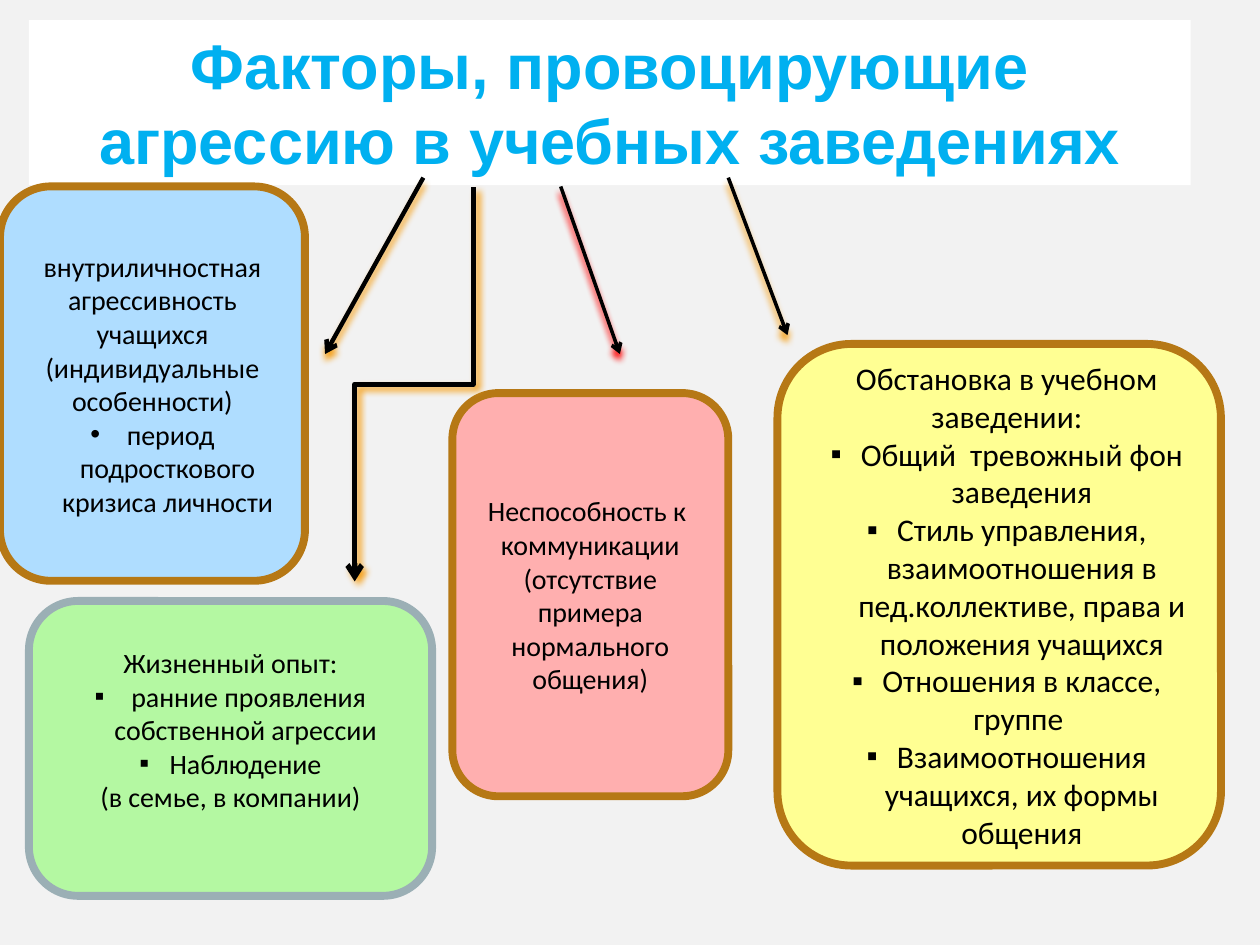
from dataclasses import dataclass

from lxml import etree
from pptx import Presentation
from pptx.dml.color import RGBColor
from pptx.enum.shapes import MSO_CONNECTOR, MSO_SHAPE
from pptx.enum.text import MSO_ANCHOR, PP_ALIGN
from pptx.oxml.ns import qn
from pptx.util import Inches, Pt

RECT, ROUND = MSO_SHAPE.RECTANGLE, MSO_SHAPE.ROUNDED_RECTANGLE
LINE, ELBOW = MSO_CONNECTOR.STRAIGHT, MSO_CONNECTOR.ELBOW
CENTER, TOP, MIDDLE = PP_ALIGN.CENTER, MSO_ANCHOR.TOP, MSO_ANCHOR.MIDDLE
COLS, ROWS = 100, 75


@dataclass(frozen=True)
class Theme:
    """Colours, fonts and type sizes."""
    back: str = "F2F2F2"
    white: str = "FFFFFF"
    ink: str = "000000"
    title: str = "00B0F0"
    blue: str = "AFDDFF"
    green: str = "B4F8A2"
    pink: str = "FFAFAF"
    yellow: str = "FFFF93"
    brown: str = "B67815"
    gray: str = "9BAFB5"
    glow: str = "F6A21D"
    red: str = "FF0000"
    head: str = "Arial"
    body: str = "Calibri"
    big: int = 36
    mid: int = 18
    small: int = 16
    edge: float = 4.5


T = Theme()


def rgb(code):
    """Turn a hex code into a colour."""
    return RGBColor.from_string(code)


def cell(*nums):
    """Turn grid steps of a tenth of an inch into lengths."""
    return [Inches(num * 10 / COLS) for num in nums]


def add_box(slide, kind, spot, fill, edge=None):
    """Add a filled shape with an optional border."""
    box = slide.shapes.add_shape(kind, *cell(*spot))
    box.shadow.inherit = False
    box.fill.solid()
    box.fill.fore_color.rgb = rgb(fill)
    if edge:
        box.line.color.rgb = rgb(edge)
        box.line.width = Pt(T.edge)
    else:
        box.line.fill.background()
    return box


def add_mark(para, mark):
    """Give a paragraph a hanging bullet."""
    props = para._p.get_or_add_pPr()
    hang = Inches(0.24)
    props.set("marL", str(hang))
    props.set("indent", str(-hang))
    etree.SubElement(props, qn("a:buFont"), typeface="Arial")
    etree.SubElement(props, qn("a:buChar"), char=mark)


def write(box, lines, size, font=T.body, color=T.ink, bold=False, anchor=MIDDLE):
    """Write centred lines, each a string or a (bullet, string) pair."""
    frame = box.text_frame
    frame.word_wrap = True
    frame.vertical_anchor = anchor
    for i, line in enumerate(lines):
        mark, text = line if isinstance(line, tuple) else (None, line)
        para = frame.add_paragraph() if i else frame.paragraphs[0]
        para.text = text
        para.alignment = CENTER
        para.font.name, para.font.size = font, Pt(size)
        para.font.bold = bold
        para.font.color.rgb = rgb(color)
        if mark:
            add_mark(para, mark)


def add_card(slide, spot, fill, lines, edge=T.brown, size=T.small, pad=None):
    """Add a rounded card; pad holds left, top, right and bottom insets."""
    card = add_box(slide, ROUND, spot, fill, edge)
    write(card, lines, size)
    if pad:
        frame = card.text_frame
        (frame.margin_left, frame.margin_top,
         frame.margin_right, frame.margin_bottom) = cell(*pad)


def add_arrow(slide, ends, width, glow=T.glow, kind=LINE, turn=0, cast=(4, 90)):
    """Add an arrow with a coloured shadow; cast is distance and angle."""
    arrow = slide.shapes.add_connector(kind, *cell(*ends))
    arrow.line.color.rgb = rgb(T.ink)
    arrow.line.width = Pt(width)
    etree.SubElement(arrow.line._get_or_add_ln(), qn("a:tailEnd"), type="arrow")
    props = arrow._element.spPr
    if turn:
        props.find(qn("a:xfrm")).set("rot", str(turn * 60000))
    far, angle = cast
    fx = etree.SubElement(props, qn("a:effectLst"))
    shade = etree.SubElement(
        fx, qn("a:outerShdw"), blurRad=str(Pt(4)), dist=str(Pt(far)),
        dir=str(angle * 60000), rotWithShape="0")
    etree.SubElement(shade, qn("a:srgbClr"), val=glow)


def main():
    """Build the slide and save it."""
    deck = Presentation()
    deck.slide_width, deck.slide_height = cell(COLS, ROWS)
    slide = deck.slides.add_slide(deck.slide_layouts[6])
    slide.background.fill.solid()
    slide.background.fill.fore_color.rgb = rgb(T.back)

    title = add_box(slide, RECT, (2.3, 1.6, 92.2, 13.1), T.white)
    write(title, ["Факторы, провоцирующие агрессию в учебных заведениях"],
          T.big, T.head, T.title, True, TOP)

    add_arrow(slide, (33.6, 14.1, 25.8, 28.1), 2.5)
    add_arrow(slide, (44.5, 14.8, 49.2, 28.1), 2, T.red)
    add_arrow(slide, (57.8, 14.1, 62.5, 26.6), 2)

    add_card(slide, (0, 14.8, 24.2, 31.3), T.blue, [
        "внутриличностная агрессивность учащихся",
        "(индивидуальные особенности)",
        ("•", " период подросткового кризиса личности")])
    add_card(slide, (2.3, 47.7, 32, 23.4), T.green, [
        "Жизненный опыт:",
        ("▪", " ранние проявления собственной агрессии"),
        ("▪", "Наблюдение"),
        "(в семье, в компании)"], T.gray, pad=(1, 0.5, 1, 3.5))
    add_card(slide, (35.9, 31.2, 21.9, 32), T.pink, [
        "Неспособность к  коммуникации (отсутствие примера "
        "нормального общения)"])
    add_card(slide, (61.7, 27.3, 35.2, 41.4), T.yellow, [
        "Обстановка в учебном заведении:",
        ("▪", "Общий  тревожный фон заведения"),
        ("▪", "Стиль управления, взаимоотношения в пед.коллективе, "
              "права и положения учащихся"),
        ("▪", "Отношения в классе, группе "),
        ("▪", "Взаимоотношения учащихся, их формы общения")],
        size=T.mid, pad=(2, 0, 0.8, 0))

    add_arrow(slide, (17.2, 25.8, 48.5, 35.2), 3, kind=ELBOW, turn=90,
              cast=(3, 45))
    deck.save("out.pptx")


if __name__ == "__main__":
    main()
